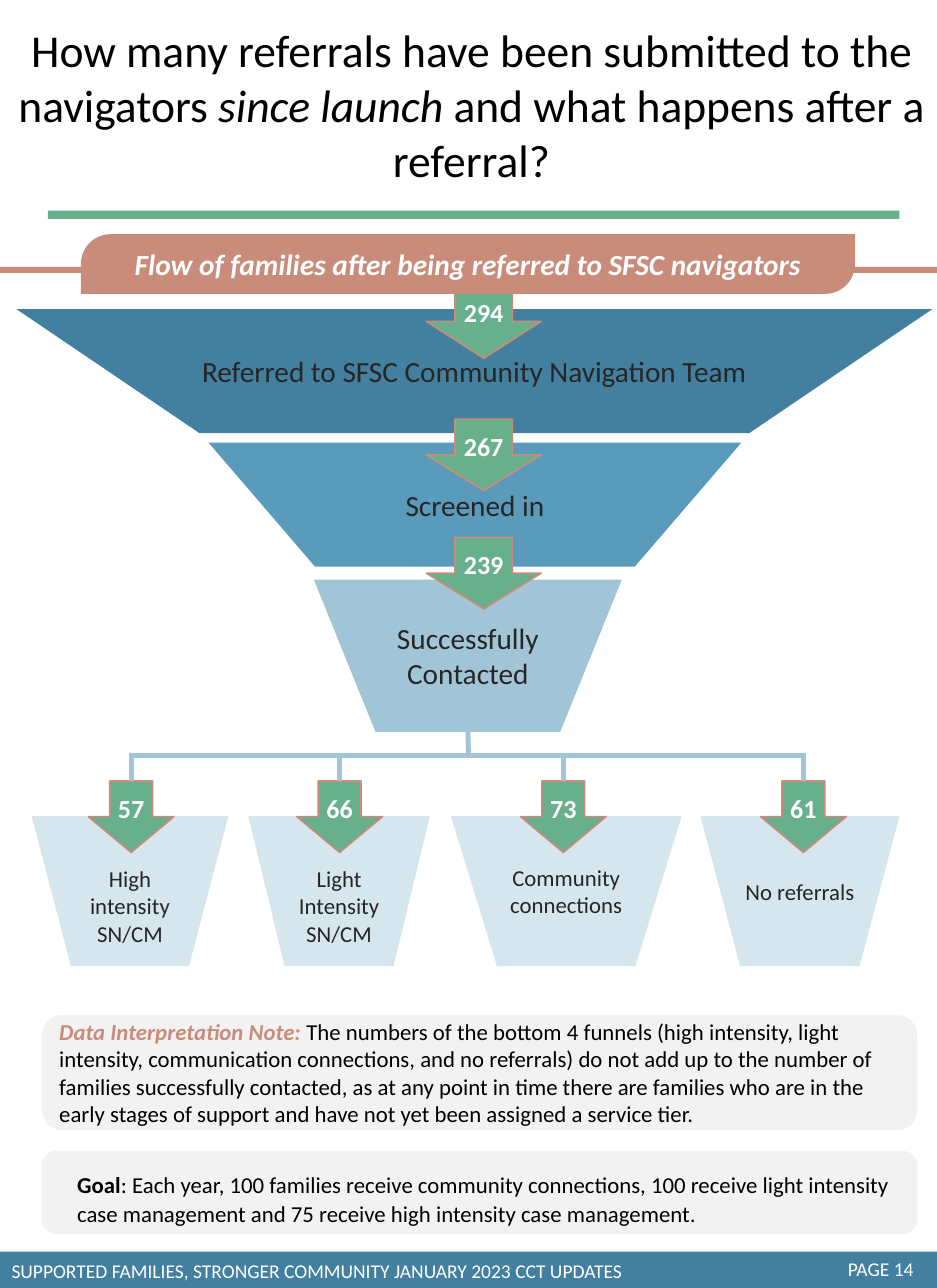
from dataclasses import dataclass

from lxml.etree import SubElement
from pptx import Presentation
from pptx.dml.color import RGBColor
from pptx.enum.shapes import MSO_CONNECTOR as Connector, MSO_SHAPE as Shape
from pptx.enum.text import MSO_ANCHOR as Anchor, MSO_AUTO_SIZE as AutoSize, PP_ALIGN as Align
from pptx.oxml.ns import qn
from pptx.util import Inches, Pt


@dataclass(frozen=True)
class Theme:
    font: str = "Calibri"
    title_size: int = 28
    heading_size: int = 18
    count_size: int = 16
    body_size: int = 14
    footer_size: int = 12
    black: str = "000000"
    white: str = "FFFFFF"
    dark: str = "262626"
    green: str = "68B08C"
    clay: str = "C98C7B"
    panel: str = "F2F2F2"
    navy: str = "43809F"
    blue: str = "5A9ABA"
    sky: str = "A1C5D7"
    pale: str = "D6E6EE"


@dataclass(frozen=True)
class Run:
    text: str
    size: int
    color: str
    bold: bool = False
    italic: bool = False


class SlideBuilder:
    def __init__(self, slide, theme):
        self.slide = slide
        self.theme = theme

    def add_runs(self, shape, runs, align=Align.CENTER, anchor=Anchor.MIDDLE,
                 insets=(0.1, 0.05, 0.1, 0.05), wrap=True):
        """Fill the shape with one paragraph; insets run left, top, right, bottom."""
        frame = shape.text_frame
        frame.auto_size = AutoSize.NONE
        frame.word_wrap = wrap
        frame.vertical_anchor = anchor
        (frame.margin_left, frame.margin_top,
         frame.margin_right, frame.margin_bottom) = map(Inches, insets)
        paragraph = frame.paragraphs[0]
        paragraph.alignment = align
        for item in runs:
            run = paragraph.add_run()
            run.text = item.text
            font = run.font
            font.name = self.theme.font
            font.size = Pt(item.size)
            font.bold = item.bold
            font.italic = item.italic
            font.color.rgb = RGBColor.from_string(item.color)
        return paragraph

    def title(self, box, runs):
        shape = self.slide.shapes.title
        shape.left, shape.top, shape.width, shape.height = map(Inches, box)
        self.add_runs(shape, runs, anchor=Anchor.TOP)

    def shape(self, kind, box, fill, outline=None):
        shape = self.slide.shapes.add_shape(kind, *map(Inches, box))
        shape.shadow.inherit = False
        shape.fill.solid()
        shape.fill.fore_color.rgb = RGBColor.from_string(fill)
        if outline:
            shape.line.color.rgb = RGBColor.from_string(outline)
            shape.line.width = Pt(1)
        else:
            shape.line.fill.background()
        return shape

    def text(self, box, runs, wrap=True):
        shape = self.slide.shapes.add_textbox(*map(Inches, box))
        return self.add_runs(shape, runs, Align.LEFT, Anchor.TOP, wrap=wrap)

    def funnel(self, box, fill, label, size, top_inset=0.05):
        shape = self.shape(Shape.FLOWCHART_MANUAL_OPERATION, box, fill)
        self.add_runs(shape, [Run(label, size, self.theme.dark)],
                      insets=(0, top_inset, 0, 0.05))
        return shape

    def count_arrow(self, center, top, width, height, count):
        box = (center - width / 2, top, width, height)
        shape = self.shape(Shape.DOWN_ARROW, box, self.theme.green, self.theme.clay)
        self.add_runs(shape, [Run(count, self.theme.count_size, self.theme.white, bold=True)],
                      insets=(0, 0.05, 0, 0.05))
        return shape

    def connector(self, start, end):
        line = self.slide.shapes.add_connector(
            Connector.STRAIGHT, *map(Inches, (*start, *end)))
        line.line.color.rgb = RGBColor.from_string(self.theme.sky)
        line.line.width = Pt(3)
        SubElement(line._element.spPr, qn("a:effectLst"))
        return line


def add_main_funnel(builder):
    """Draw the three stages and return the last one."""
    theme = builder.theme
    stages = [
        ((0.14, 2.64, 7.82, 1.06), theme.navy, "Referred to SFSC Community Navigation Team"),
        ((1.78, 3.78, 4.55, 1.06), theme.blue, "Screened in"),
        ((2.68, 4.95, 2.63, 1.3), theme.sky, "Successfully Contacted"),
    ]
    for box, fill, label in stages:
        last_stage = builder.funnel(box, fill, label, theme.heading_size)
    for top, height, count in [(2.43, 0.63, "294"), (3.58, 0.61, "267"), (4.59, 0.61, "239")]:
        builder.count_arrow(4.13, top, 0.98, height, count)
    return last_stage


def add_service_tiers(builder, source):
    """Draw the four outcomes and branch to them from the source funnel."""
    tiers = [
        (0.27, 1.68, "High intensity SN/CM", 0.3, 1.12, "57"),
        (2.12, 1.55, "Light Intensity SN/CM", 0.3, 2.9, "66"),
        (3.85, 1.97, "Community connections", 0.05, 4.81, "73"),
        (5.98, 1.7, "No referrals", 0.05, 6.86, "61"),
    ]
    branch_y, arrow_top, half_line = 6.45, 6.67, 0.02
    trunk = builder.connector((4, 6.25), (4, branch_y))
    trunk.begin_connect(source, 2)
    builder.connector((tiers[0][4] - half_line, branch_y), (tiers[-1][4] + half_line, branch_y))
    for left, width, label, top_inset, center, count in tiers:
        builder.funnel((left, 6.97, width, 1.28), builder.theme.pale, label,
                       builder.theme.body_size, top_inset)
        arrow = builder.count_arrow(center, arrow_top, 0.73, 0.61, count)
        drop = builder.connector((center, branch_y), (center, arrow_top))
        drop.end_connect(arrow, 0)


def add_notes_panels(builder):
    theme = builder.theme
    size = theme.body_size
    note = builder.shape(Shape.ROUNDED_RECTANGLE, (0.36, 8.67, 7.47, 0.98), theme.panel)
    builder.add_runs(note, [
        Run("Data Interpretation Note: ", size, theme.clay, bold=True, italic=True),
        Run("The numbers of the bottom 4 funnels (high intensity, light intensity, "
            "communication connections, and no referrals) do not add up to the number of "
            "families successfully contacted, as at any point in time there are families "
            "who are in the early stages of support and have not yet been assigned a "
            "service tier.", size, theme.black),
    ], Align.LEFT)
    builder.shape(Shape.ROUNDED_RECTANGLE, (0.36, 9.83, 7.47, 0.71), theme.panel)
    goal = builder.text((0.56, 9.93, 7.28, 0.72), [
        Run("Goal", size, theme.black, bold=True),
        Run(": Each year, 100 families receive community connections, 100 receive light "
            "intensity case management and 75 receive high intensity case management.",
            size, theme.black),
    ])
    goal.line_spacing = 1.07
    goal.space_after = Pt(8)


def add_footer(builder):
    theme = builder.theme
    builder.shape(Shape.RECTANGLE, (0, 10.69, 8, 0.31), theme.navy)
    for box, label in [
        ((0, 10.7, 5.51, 0.3), "SUPPORTED FAMILIES, STRONGER COMMUNITY JANUARY 2023 CCT UPDATES"),
        ((7.14, 10.69, 0.82, 0.3), "PAGE 14"),
    ]:
        builder.text(box, [Run(label, theme.footer_size, theme.white)], wrap=False)


def main():
    presentation = Presentation()
    presentation.slide_width, presentation.slide_height = Inches(8), Inches(11)
    theme = Theme()
    title_only = presentation.slide_layouts[5]
    builder = SlideBuilder(presentation.slides.add_slide(title_only), theme)

    builder.title((0, 0.14, 8.05, 1.51), [
        Run("How many referrals have been submitted to the navigators ",
            theme.title_size, theme.black),
        Run("since launch ", theme.title_size, theme.black, italic=True),
        Run("and what happens after a referral?", theme.title_size, theme.black),
    ])
    builder.shape(Shape.RECTANGLE, (0.41, 1.8, 7.27, 0.07), theme.green)

    last_stage = add_main_funnel(builder)
    add_service_tiers(builder, last_stage)

    builder.shape(Shape.RECTANGLE, (0, 2.28, 8, 0.05), theme.clay)
    banner = builder.shape(Shape.ROUND_2_DIAG_RECTANGLE, (0.69, 2, 6.61, 0.51), theme.clay)
    banner.adjustments[0] = 0.5
    builder.add_runs(banner, [Run("Flow of families after being referred to SFSC navigators",
                                  theme.heading_size, theme.white, bold=True, italic=True)])

    add_notes_panels(builder)
    add_footer(builder)
    presentation.save("out.pptx")


if __name__ == "__main__":
    main()
